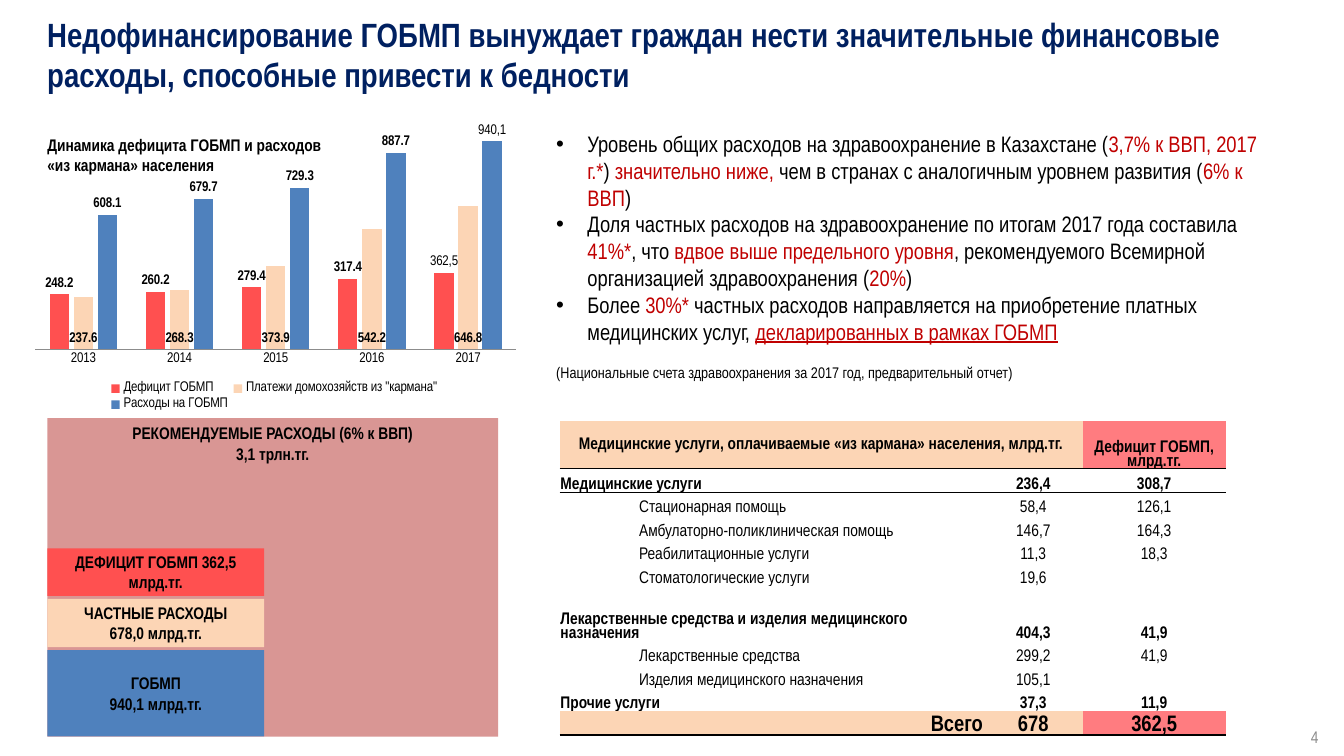
from lxml import etree
from pptx import Presentation
from pptx import util as u
from pptx.chart.data import CategoryChartData
from pptx.dml.color import RGBColor
from pptx.enum import chart as ch, shapes, text
from pptx.oxml import parse_xml
from pptx.oxml.ns import nsdecls, qn

BLACK, WHITE, NAVY = "000000", "FFFFFF", "002060"
CORAL, PEACH, BLUE = "FF5050", "FCD5B5", "4F81BD"
ROSE, PINK, GREY = "D99694", "FF7C80", "8C8C8C"
RED = {"color": "C00000"}
LINK = RED | {"underline": True}
HEAD = {"size": 12, "bold": True}
LEFT, CENTER, RIGHT = text.PP_ALIGN.LEFT, text.PP_ALIGN.CENTER, text.PP_ALIGN.RIGHT
TOP, MIDDLE, BOTTOM = (text.MSO_ANCHOR.TOP, text.MSO_ANCHOR.MIDDLE,
                       text.MSO_ANCHOR.BOTTOM)
ABOVE, BASE = ch.XL_LABEL_POSITION.OUTSIDE_END, ch.XL_LABEL_POSITION.INSIDE_BASE


def rgb(code):
    return RGBColor.from_string(code)


class Page:
    """Draws styled elements on one slide, with lengths in percent of its size."""

    def __init__(self, deck, font):
        self.width, self.height = deck.slide_width, deck.slide_height
        self.font = font
        self.slide = deck.slides.add_slide(deck.slide_layouts[6])

    def x(self, share):
        return u.Emu(round(self.width * share / 100))

    def y(self, share):
        return u.Emu(round(self.height * share / 100))

    def place(self, left, top, width, height):
        return self.x(left), self.y(top), self.x(width), self.y(height)

    def style(self, font, size, color=BLACK, **flags):
        for name, value in {"name": self.font, "size": u.Pt(size), **flags}.items():
            setattr(font, name, value)
        font.color.rgb = rgb(color)

    def add_runs(self, paragraph, runs, align=LEFT, **fmt):
        paragraph.alignment = align
        for words, changes in runs:
            run = paragraph.add_run()
            run.text = words
            self.style(run.font, **(fmt | changes))

    def fill_frame(self, frame, lines, anchor=TOP, **fmt):
        frame.word_wrap = True
        frame.vertical_anchor = anchor
        for index, line in enumerate(lines):
            paragraph = frame.add_paragraph() if index else frame.paragraphs[0]
            self.add_runs(paragraph, [(line, {})], **fmt)

    def note(self, at, lines, **fmt):
        frame = self.slide.shapes.add_textbox(*self.place(*at)).text_frame
        self.fill_frame(frame, lines, **fmt)
        return frame

    def bullets(self, at, points, footnote, size, footnote_size):
        frame = self.note(at, [])
        for index, runs in enumerate(points):
            paragraph = frame.add_paragraph() if index else frame.paragraphs[0]
            self.add_runs(paragraph, runs, size=size)
            props = paragraph._p.get_or_add_pPr()
            indent = u.Inches(0.31)
            props.set("marL", str(indent))
            props.set("indent", str(-indent))
            etree.SubElement(props, qn("a:buFont"), typeface="Arial")
            etree.SubElement(props, qn("a:buChar"), char="•")
        source = frame.add_paragraph()
        source.space_before = u.Pt(13)
        self.add_runs(source, [(footnote, {})], size=footnote_size)

    def block(self, at, color, lines, anchor=MIDDLE):
        box = self.slide.shapes.add_shape(shapes.MSO_SHAPE.RECTANGLE, *self.place(*at))
        box.shadow.inherit = False
        box.fill.solid()
        box.fill.fore_color.rgb = rgb(color)
        box.line.fill.background()
        self.fill_frame(box.text_frame, lines, anchor, align=CENTER, **HEAD)

    def set_layout(self, element, x, y, w, h, inner=False):
        target = '<c:layoutTarget val="inner"/>' if inner else ""
        sizes = "".join(f'<c:{k} val="{v}"/>' for k, v in zip("xywh", (x, y, w, h)))
        layout = parse_xml(
            f'<c:layout {nsdecls("c")}><c:manualLayout>{target}<c:xMode val="edge"/>'
            f'<c:yMode val="edge"/>{sizes}</c:manualLayout></c:layout>')
        for old in element.findall(qn("c:layout")):
            element.remove(old)
        position = element.find(qn("c:legendPos"))
        element.insert(0 if position is None else element.index(position) + 1, layout)

    def columns(self, at, years, series):
        data = CategoryChartData(number_format="0.0")
        data.categories = years
        for name, values, *_ in series:
            data.add_series(name, values)
        chart = self.slide.shapes.add_chart(
            ch.XL_CHART_TYPE.COLUMN_CLUSTERED, *self.place(*at), data).chart
        self.style(chart.font, 10)
        chart.has_title = False
        chart.has_legend = True
        chart.legend.position = ch.XL_LEGEND_POSITION.BOTTOM
        chart.legend.include_in_layout = False
        self.style(chart.legend.font, 10)
        plot = chart.plots[0]
        for name, value in {"gap_width": 150, "overlap": -25,
                            "vary_by_categories": False}.items():
            setattr(plot, name, value)
        for name, value in {"visible": False, "has_major_gridlines": False,
                            "minimum_scale": 0, "maximum_scale": 1000}.items():
            setattr(chart.value_axis, name, value)
        chart.category_axis.major_tick_mark = ch.XL_TICK_MARK.NONE
        chart.category_axis.format.line.color.rgb = rgb(GREY)
        for bars, (_, _, color, position, last) in zip(plot.series, series):
            bars.format.fill.solid()
            bars.format.fill.fore_color.rgb = rgb(color)
            labels = bars.data_labels
            for name, value in {"show_value": True, "position": position,
                                "number_format": "0.0",
                                "number_format_is_linked": False}.items():
                setattr(labels, name, value)
            self.style(labels.font, 10, bold=True)
            if last:
                label = bars.points[len(years) - 1].data_label
                self.add_runs(label.text_frame.paragraphs[0], [(last, {})],
                              CENTER, size=10, bold=False)
                label.position = position
        self.set_layout(chart._chartSpace.chart.plotArea, 0.02, 0.02, 0.96, 0.75, True)
        self.set_layout(chart.legend._element, 0.16, 0.87, 0.68, 0.12)

    def edge(self, cell, side, points):
        line = parse_xml(
            f'<a:{side} {nsdecls("a")} w="{u.Pt(points)}"><a:solidFill>'
            f'<a:srgbClr val="{BLACK}"/></a:solidFill></a:{side}>')
        cell._tc.get_or_add_tcPr().insert(0, line)

    def cell(self, cell, words, color, anchor=BOTTOM, **fmt):
        for name, value in {"margin_left": 0.01, "margin_right": 0.01,
                            "margin_top": 0.01, "margin_bottom": 0}.items():
            setattr(cell, name, u.Inches(value))
        cell.vertical_anchor = anchor
        cell.fill.solid()
        cell.fill.fore_color.rgb = rgb(color)
        paragraph = cell.text_frame.paragraphs[0]
        paragraph.line_spacing = 0.85
        if words:
            self.add_runs(paragraph, [(words, {})], **fmt)
        else:
            etree.SubElement(paragraph._p, qn("a:endParaRPr"), sz="1200")

    def costs(self, corner, widths, heights, rows):
        at = *corner, sum(widths), sum(heights)
        table = self.slide.shapes.add_table(
            len(rows), len(widths), *self.place(*at)).table
        table.first_row = table.horz_banding = False
        style = table._tbl.tblPr.find(qn("a:tableStyleId"))
        style.text = "{2D5ABB26-0587-4C30-8999-92F81FD0307C}"
        for column, width in zip(table.columns, widths):
            column.width = self.x(width)
        total = len(rows) - 1
        edges = {0: ("lnB", 1), 1: ("lnT", 1), total: ("lnB", 1.5)}
        for index, (kind, service, paid, deficit) in enumerate(rows):
            table.rows[index].height = self.y(heights[index])
            cells = [table.cell(index, column) for column in range(len(widths))]
            framed = index in (0, total)
            fills = [PEACH] * 3 + [PINK] if framed else [WHITE] * 4
            words = [service, "", paid, deficit]
            if kind == "item":
                words = ["", service, paid, deficit]
            else:
                cells[0].merge(cells[2 if kind == "head" else 1])
            first = {"head": CENTER, "total": RIGHT}.get(kind, LEFT)
            for column, cell in enumerate(cells):
                self.cell(cell, words[column], fills[column],
                          MIDDLE if kind == "head" and column == 0 else BOTTOM,
                          align=first if column < 2 else CENTER,
                          size=16 if kind == "total" else 12, bold=kind != "item")
                if index in edges:
                    self.edge(cell, *edges[index])


def main():
    deck = Presentation()
    deck.slide_width, deck.slide_height = u.Inches(13.33), u.Inches(7.5)
    page = Page(deck, "Arial Narrow")
    page.note((76.35, 94.8, 22.5, 5.33), ["4"], anchor=MIDDLE, align=RIGHT,
              size=12, color=GREY)
    page.bullets((40.65, 16.53, 53.63, 35.07), [
        [("Уровень общих расходов на здравоохранение в Казахстане (", {}),
         ("3,7% к ВВП, 2017 г.*", RED), (") ", {}), ("значительно ниже, ", RED),
         ("чем в странах с аналогичным уровнем развития (", {}),
         ("6% к ВВП", RED), (")", {})],
        [("Доля частных расходов на здравоохранение по итогам 2017 года составила ", {}),
         ("41%*", RED), (", что ", {}), ("вдвое выше предельного уровня", RED),
         (", рекомендуемого Всемирной организацией здравоохранения (", {}),
         ("20%", RED), (")", {})],
        [("Более ", {}), ("30%*", RED),
         (" частных расходов направляется на приобретение платных медицинских услуг, ", {}),
         ("декларированных в рамках ГОБМП", LINK)],
    ], "(Национальные счета здравоохранения за 2017 год, предварительный отчет)", 16, 11)
    page.note((2.78, 1.2, 90.3, 12.13), [
        "Недофинансирование ГОБМП вынуждает граждан нести значительные финансовые "
        "расходы, способные привести к бедности"], size=24, color=NAVY, bold=True)
    page.note((2.78, 17.2, 23.63, 6.67), [
        "Динамика дефицита ГОБМП и расходов", "«из кармана» населения"], **HEAD)
    page.columns((1.88, 16.13, 37.28, 39.07), ["2013", "2014", "2015", "2016", "2017"], [
        ("Дефицит ГОБМП", (248.2, 260.2, 279.4, 317.4, 344.4), CORAL, ABOVE, "362,5"),
        ('Платежи домохозяйств из "кармана" ', (237.6, 268.3, 373.9, 542.2, 646.8),
         PEACH, BASE, None),
        ("Расходы на ГОБМП", (608.1, 679.7, 729.3, 887.7, 939.8), BLUE, ABOVE, "940,1"),
    ])
    page.block((3.53, 55.33, 33.53, 42.13), ROSE,
               ["РЕКОМЕНДУЕМЫЕ РАСХОДЫ (6% к ВВП)", "3,1 трлн.тг."], TOP)
    for top, height, color, lines in (
            (79.2, 6.4, PEACH, ["ЧАСТНЫЕ РАСХОДЫ", "678,0 млрд.тг."]),
            (86, 11.4, BLUE, ["ГОБМП", "940,1 млрд.тг."]),
            (72.53, 6.3, CORAL, ["ДЕФИЦИТ ГОБМП 362,5 млрд.тг."])):
        page.block((3.53, top, 16.13, height), color, lines)
    page.costs((41.63, 55.73), (5.85, 25.73, 7.35, 10.65),
               [6.27] + [3.1] * 5 + [7.3] + [3.1] * 4, [
        ("head", "Медицинские услуги, оплачиваемые «из кармана» населения, млрд.тг.",
         "", "Дефицит ГОБМП, млрд.тг."),
        ("group", "Медицинские услуги", "236,4", "308,7"),
        ("item", "Стационарная помощь", "58,4", "126,1"),
        ("item", "Амбулаторно-поликлиническая помощь", "146,7", "164,3"),
        ("item", "Реабилитационные услуги", "11,3", "18,3"),
        ("item", "Стоматологические услуги", "19,6", ""),
        ("group", "Лекарственные средства и изделия медицинского назначения",
         "404,3", "41,9"),
        ("item", "Лекарственные средства", "299,2", "41,9"),
        ("item", "Изделия медицинского назначения", "105,1", ""),
        ("group", "Прочие услуги", "37,3", "11,9"),
        ("total", "Всего", "678", "362,5")])
    deck.save("out.pptx")


if __name__ == "__main__":
    main()
